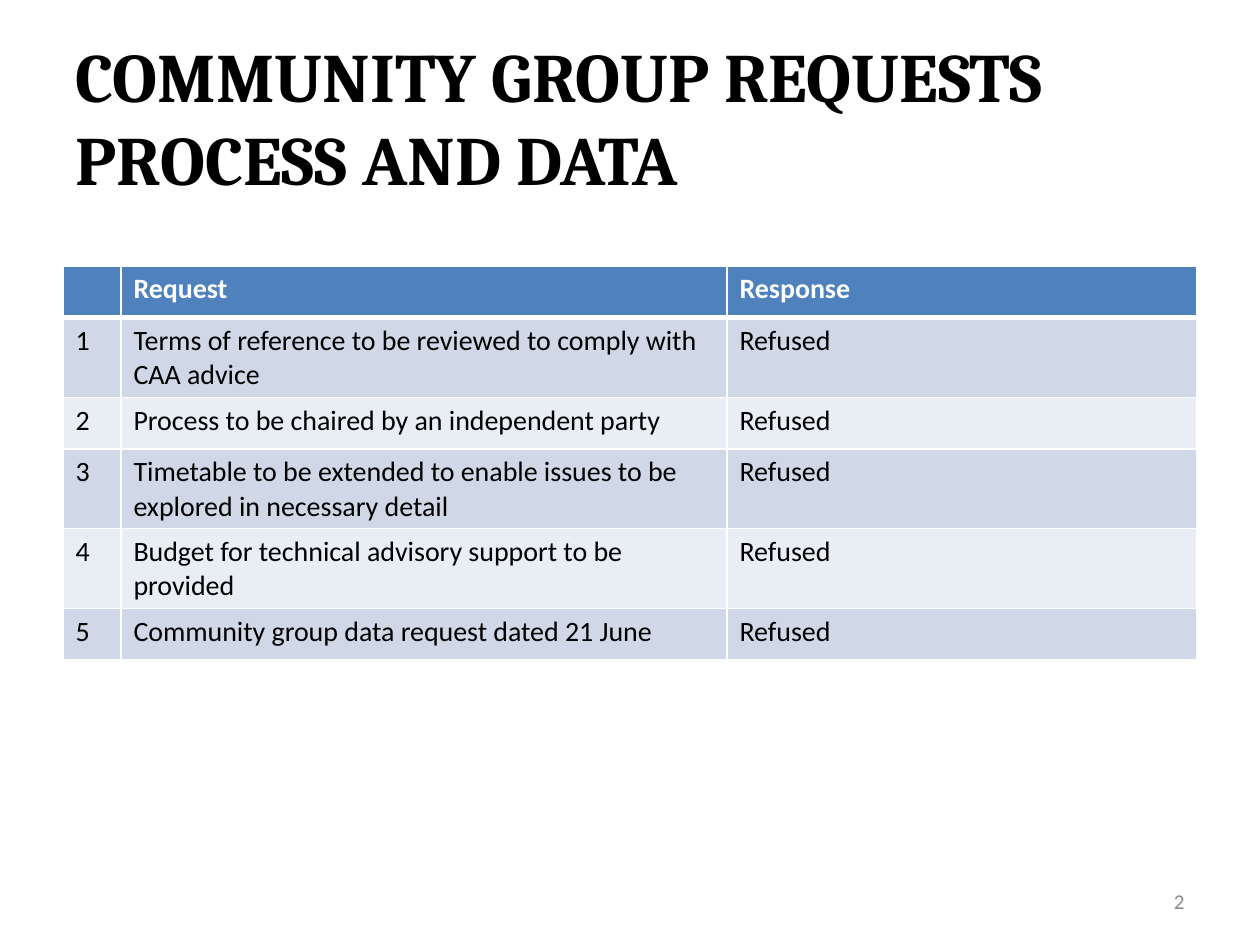
import pptx
import pptx.dml.color
import pptx.enum.text
import pptx.oxml.ns
import pptx.util
from lxml import etree

Inches = pptx.util.Inches
Pt = pptx.util.Pt
RGBColor = pptx.dml.color.RGBColor
PP_ALIGN = pptx.enum.text.PP_ALIGN
MIDDLE = pptx.enum.text.MSO_ANCHOR.MIDDLE

BLACK = RGBColor(0x00, 0x00, 0x00)
WHITE = RGBColor(0xFF, 0xFF, 0xFF)
GREY = RGBColor(0x8C, 0x8C, 0x8C)
HEADER_BLUE = RGBColor(0x4F, 0x81, 0xBD)
BAND_DARK = RGBColor(0xD0, 0xD8, 0xE8)
BAND_LIGHT = RGBColor(0xE9, 0xED, 0xF4)


def format_text(paragraph, color, **font_values):
    for run in paragraph.runs:
        run.font.color.rgb = color
        for attribute, value in font_values.items():
            setattr(run.font, attribute, value)


def add_border(cell, side, width):
    properties = cell._tc.get_or_add_tcPr()
    line = etree.SubElement(properties, pptx.oxml.ns.qn(f"a:ln{side}"), w=str(Pt(width)))
    fill = etree.SubElement(line, pptx.oxml.ns.qn("a:solidFill"))
    etree.SubElement(fill, pptx.oxml.ns.qn("a:srgbClr"), val=str(WHITE))


deck = pptx.Presentation()
deck.slide_width, deck.slide_height = Inches(10), Inches(7.5)
slide = deck.slides.add_slide(deck.slide_layouts.get_by_name("Title Only"))

# Title
title = slide.shapes.title
title_box = {"left": 0.5, "top": 0.3, "width": 9, "height": 1.25}
for attribute, value in title_box.items():
    setattr(title, attribute, Inches(value))
title.text_frame.text = "COMMUNITY GROUP REQUESTS\vPROCESS AND DATA"
title.text_frame.vertical_anchor = MIDDLE
title.text_frame.auto_size = pptx.enum.text.MSO_AUTO_SIZE.NONE
heading = title.text_frame.paragraphs[0]
heading.alignment = PP_ALIGN.LEFT
format_text(heading, BLACK, name="Cambria", size=Pt(39.6), bold=True)

# Page number
page_number = slide.shapes.add_textbox(Inches(7.17), Inches(6.95), Inches(2.33), Inches(0.4))
page_number.text_frame.word_wrap = True
page_number.text_frame.vertical_anchor = MIDDLE
page_number.text_frame.text = "2"
number_line = page_number.text_frame.paragraphs[0]
number_line.alignment = PP_ALIGN.RIGHT
format_text(number_line, GREY, name="Calibri", size=Pt(12))

# Requests and responses
requests = [
    "Terms of reference to be reviewed to comply with CAA advice",
    "Process to be chaired by an independent party",
    "Timetable to be extended to enable issues to be explored in necessary detail",
    "Budget for technical advisory support to be provided",
    "Community group data request dated 21 June",
]
rows = [("", "Request", "Response")]
rows += [(str(number), request, "Refused") for number, request in enumerate(requests, 1)]
column_widths = [0.46, 4.81, 3.73]
row_height = 0.41

request_table = slide.shapes.add_table(
    len(rows), len(column_widths), Inches(0.5), Inches(2.11),
    Inches(sum(column_widths)), Inches(row_height * len(rows))).table
for column, width in zip(request_table.columns, column_widths):
    column.width = Inches(width)

for row_index, row in enumerate(rows):
    request_table.rows[row_index].height = Inches(row_height)
    is_header = row_index == 0
    band = HEADER_BLUE if is_header else (BAND_LIGHT, BAND_DARK)[row_index % 2]
    # The rule below the header is heavier than the others
    border_widths = {"L": 1, "R": 1, "T": 3 if row_index == 1 else 1, "B": 3 if is_header else 1}
    for column_index, text in enumerate(row):
        cell = request_table.cell(row_index, column_index)
        cell.text = text
        format_text(cell.text_frame.paragraphs[0], WHITE if is_header else BLACK,
                    name="Calibri", size=Pt(16), bold=is_header)
        for side, width in border_widths.items():
            add_border(cell, side, width)
        cell.fill.solid()
        cell.fill.fore_color.rgb = band

deck.save("out.pptx")
